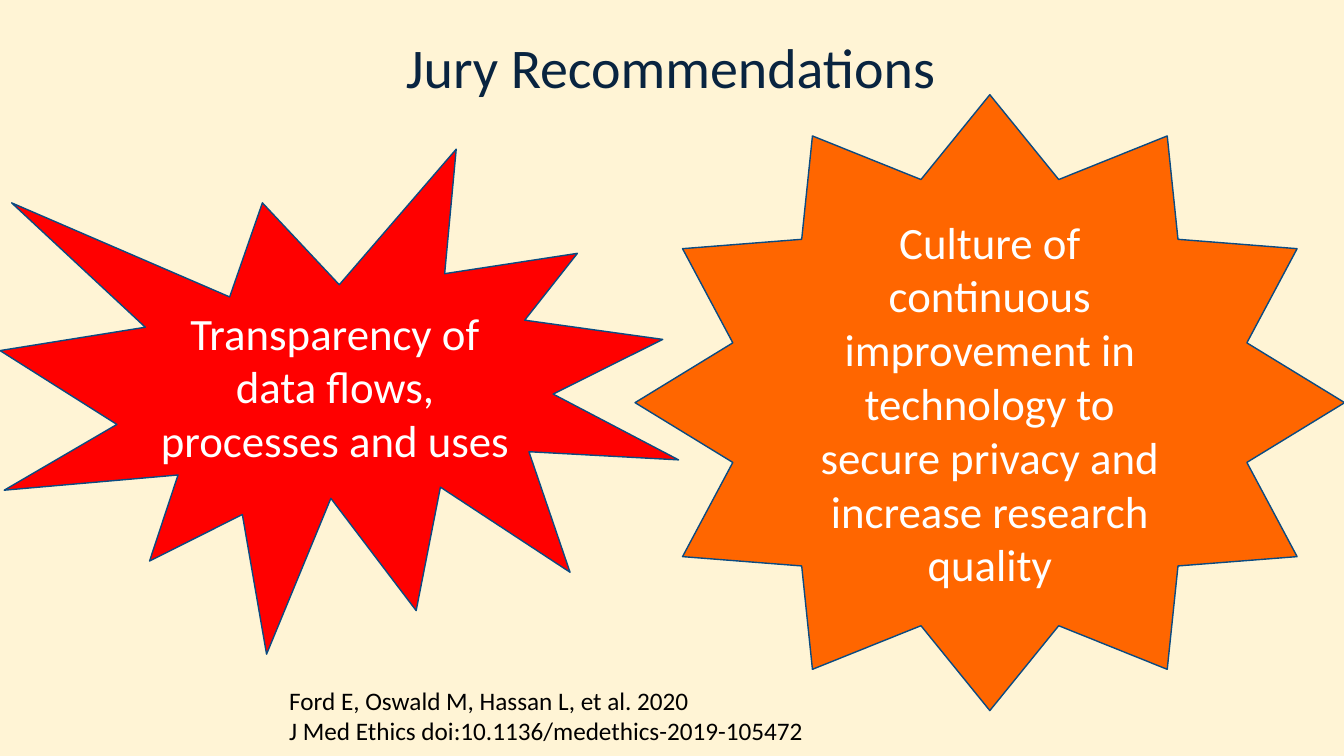
from pptx import Presentation
from pptx.dml.color import RGBColor
from pptx.enum.shapes import MSO_SHAPE as Preset
from pptx.enum.text import MSO_ANCHOR as Anchor, MSO_AUTO_SIZE as AutoSize, PP_ALIGN as Align
from pptx.util import Inches, Pt

WIDTH, HEIGHT = Inches(13.33), Inches(7.5)
FONT = "Calibri"
COLORS = {
    "background": "FFF4D5",
    "title": "092440",
    "outline": "0A4B82",
    "transparency": "FF0000",
    "improvement": "FF6600",
    "light": "FFFFFF",
    "dark": "000000",
}


def color(name):
    """Return the named colour."""
    return RGBColor.from_string(COLORS[name])


def share(left, top, width, height):
    """Turn percentages of the slide into a position and a size."""
    return [round(percent / 100 * side) for percent, side in
            zip((left, top, width, height), (WIDTH, HEIGHT, WIDTH, HEIGHT))]


def write(shape, *lines, size=18, ink="dark", align=Align.LEFT,
          anchor=Anchor.TOP, spacing=None):
    """Fill a shape with one formatted paragraph per line."""
    frame = shape.text_frame
    frame.word_wrap = True
    frame.vertical_anchor = anchor
    frame.text = "\n".join(lines)
    for paragraph in frame.paragraphs:
        paragraph.alignment = align
        paragraph.line_spacing = spacing
        paragraph.font.name = FONT
        paragraph.font.size = Pt(size)
        paragraph.font.color.rgb = color(ink)


def add_title(slide, text, box):
    """Place and format the title placeholder."""
    title = slide.shapes.title
    title.left, title.top, title.width, title.height = box
    title.text_frame.auto_size = AutoSize.NONE
    write(title, text, size=40, ink="title", align=Align.CENTER, spacing=0.9)


def add_burst(slide, preset, text, box, fill):
    """Add an outlined burst with centred text."""
    burst = slide.shapes.add_shape(preset, *box)
    burst.shadow.inherit = False
    burst.fill.solid()
    burst.fill.fore_color.rgb = color(fill)
    burst.line.color.rgb = color("outline")
    burst.line.width = Pt(1)
    write(burst, text, size=32, ink="light", align=Align.CENTER, anchor=Anchor.MIDDLE)


def add_citation(slide, lines, box):
    """Add the reference below the bursts."""
    citation = slide.shapes.add_textbox(*box)
    write(citation, *lines)
    citation.text_frame.auto_size = AutoSize.SHAPE_TO_FIT_TEXT


def main():
    """Build the slide and save it."""
    presentation = Presentation()
    presentation.slide_width, presentation.slide_height = WIDTH, HEIGHT
    slide = presentation.slides.add_slide(presentation.slide_layouts.get_by_name("Title Only"))
    slide.background.fill.solid()
    slide.background.fill.fore_color.rgb = color("background")
    add_title(slide, "Jury Recommendations", share(3, 4.67, 93.77, 11.6))
    add_burst(slide, Preset.EXPLOSION1, "Transparency of data flows, processes and uses",
              share(0, 19.73, 50.49, 66.8), "transparency")
    add_burst(slide, Preset.STAR_12_POINT,
              "Culture of continuous improvement in technology to secure privacy "
              "and increase research quality",
              share(47.25, 12.53, 52.8, 81.47), "improvement")
    add_citation(slide, ["Ford E, Oswald M, Hassan L, et al. 2020",
                         "J Med Ethics doi:10.1136/medethics-2019-105472"],
                 share(20.78, 90, 42.1, 9.47))
    presentation.save("out.pptx")


if __name__ == "__main__":
    main()
